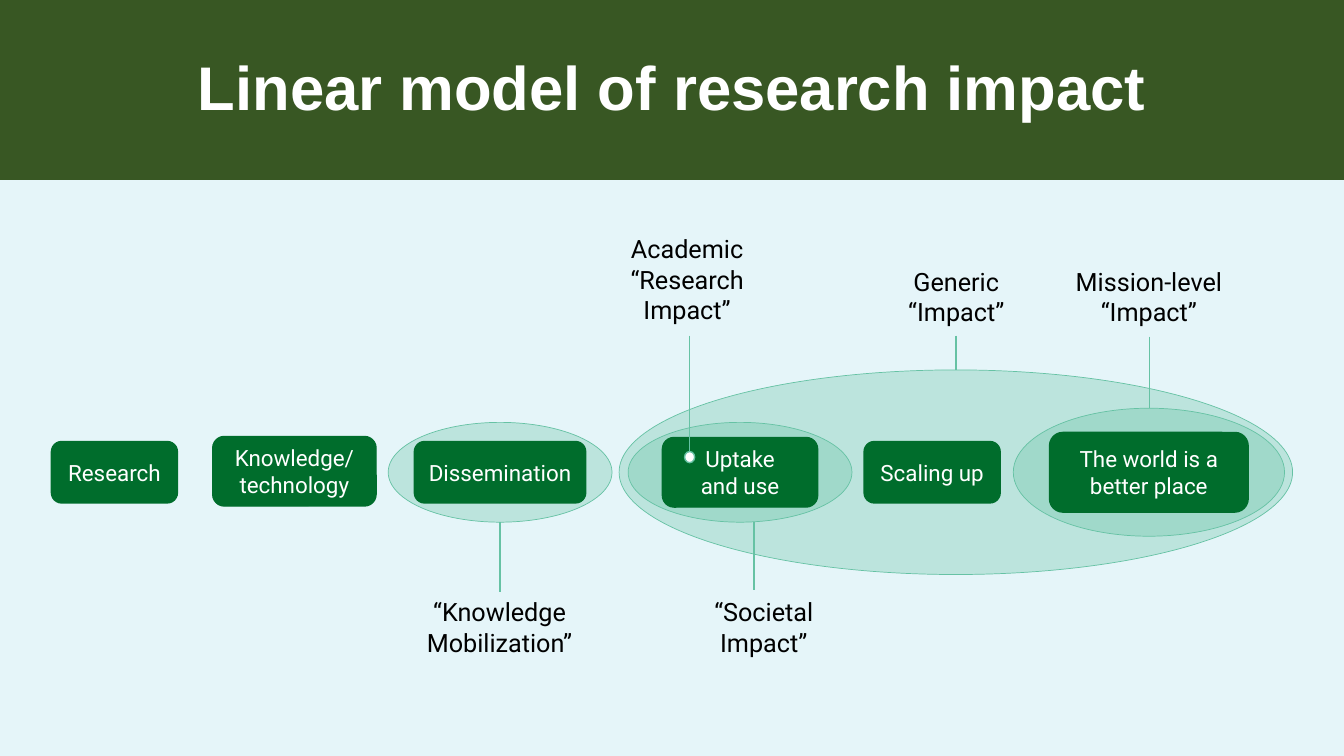
from lxml import etree
from pptx import Presentation
from pptx.dml.color import RGBColor
from pptx.enum import shapes, text
from pptx.oxml.ns import qn
from pptx.util import Inches, Pt

PALE, MINT, GREEN, OLIVE = "E5F5F9", "66C2A4", "006D2C", "385723"
WHITE, BLACK = "FFFFFF", "000000"
KIND = shapes.MSO_SHAPE


def add_filled(kind, box, fill, line, width=1):
    sp = s.shapes.add_shape(kind, *map(Inches, box))
    sp.shadow.inherit = False
    sp.fill.solid()
    sp.fill.fore_color.rgb = RGBColor.from_string(fill)
    sp.line.color.rgb = RGBColor.from_string(line)
    sp.line.width = Pt(width)
    return sp


def write(sp, lines, size, color, font="Roboto", bold=False):
    """Fill a shape with wrapped, centred paragraphs and return its text frame."""
    tf = sp.text_frame
    tf.word_wrap = True
    for i, line in enumerate(lines):
        p = tf.add_paragraph() if i else tf.paragraphs[0]
        p.alignment = text.PP_ALIGN.CENTER
        r = p.add_run()
        r.text = line
        r.font.name, r.font.size, r.font.bold = font, Pt(size), bold
        r.font.color.rgb = RGBColor.from_string(color)
    return tf


prs = Presentation()
prs.slide_width, prs.slide_height = Inches(13.33), Inches(7.5)
s = prs.slides.add_slide(prs.slide_layouts[6])
s.background.fill.solid()
s.background.fill.fore_color.rgb = RGBColor.from_string(PALE)

# Translucent impact zones, the widest at the back
zones = [
    (6.14, 3.67, 6.68, 2.03),
    (3.85, 4.19, 2.22, 0.99),
    (6.23, 4.19, 2.22, 0.99),
    (10.05, 4.05, 2.69, 1.27),
]
for box in zones:
    zone = add_filled(KIND.OVAL, box, MINT, MINT, 0.5)
    color = zone.fill._xPr.find(qn("a:solidFill"))[0]
    etree.SubElement(color, qn("a:alpha"), val="32000")

# Stages of the linear model: name, box, side margin (wider beside the marker dot)
stages = [
    ("Research", (0.51, 4.38, 1.25, 0.61), 0.1),
    ("Knowledge/technology", (2.11, 4.33, 1.62, 0.69), 0.1),
    ("Dissemination", (4.11, 4.38, 1.7, 0.61), 0.1),
    ("Uptake and use", (6.57, 4.34, 1.54, 0.69), 0.28),
    ("Scaling up", (8.57, 4.38, 1.35, 0.61), 0.1),
    ("The world is a better place", (10.41, 4.29, 1.97, 0.79), 0.1),
]
for name, box, margin in stages:
    stage = add_filled(KIND.ROUNDED_RECTANGLE, box, GREEN, GREEN)
    tf = write(stage, [name], 16, WHITE)
    tf.vertical_anchor = text.MSO_ANCHOR.MIDDLE
    tf.margin_left = tf.margin_right = Inches(margin)
    tf.margin_top = tf.margin_bottom = 0

# Vertical leaders from the zones to their labels: x, top, bottom
leaders = [
    (4.96, 5.18, 5.87),
    (6.84, 3.33, 4.59),
    (7.48, 5.18, 5.85),
    (9.48, 3.33, 3.67),
    (11.4, 3.34, 4.05),
]
for x, top, bottom in leaders:
    leader = s.shapes.add_connector(
        shapes.MSO_CONNECTOR.STRAIGHT, Inches(x), Inches(top), Inches(x), Inches(bottom))
    leader.line.color.rgb = RGBColor.from_string(MINT)
    leader.line.width = Pt(1)
    etree.SubElement(leader._element.spPr, qn("a:effectLst"))
add_filled(KIND.OVAL, (6.79, 4.48, 0.1, 0.11), WHITE, MINT)

labels = [
    (["Academic", "“Research Impact”"], (6.07, 2.27, 1.49, 1.01)),
    (["Generic “Impact”"], (8.87, 2.59, 1.23, 0.71)),
    (["Mission-level “Impact”"], (10.49, 2.59, 1.81, 0.71)),
    (["“Knowledge Mobilization”"], (4.02, 5.87, 1.87, 0.71)),
    (["“Societal Impact”"], (6.7, 5.87, 1.75, 0.71)),
]
for lines, box in labels:
    write(s.shapes.add_textbox(*map(Inches, box)), lines, 18, BLACK)

add_filled(KIND.RECTANGLE, (0, 0, 13.33, 1.78), OLIVE, OLIVE)
title = s.shapes.add_textbox(Inches(0.92), Inches(0.17), Inches(11.5), Inches(1.45))
tf = write(title, ["Linear model of research impact"], 44, WHITE, "Arial", True)
tf.vertical_anchor = text.MSO_ANCHOR.MIDDLE
tf.paragraphs[0].line_spacing = 0.9

prs.save("out.pptx")
